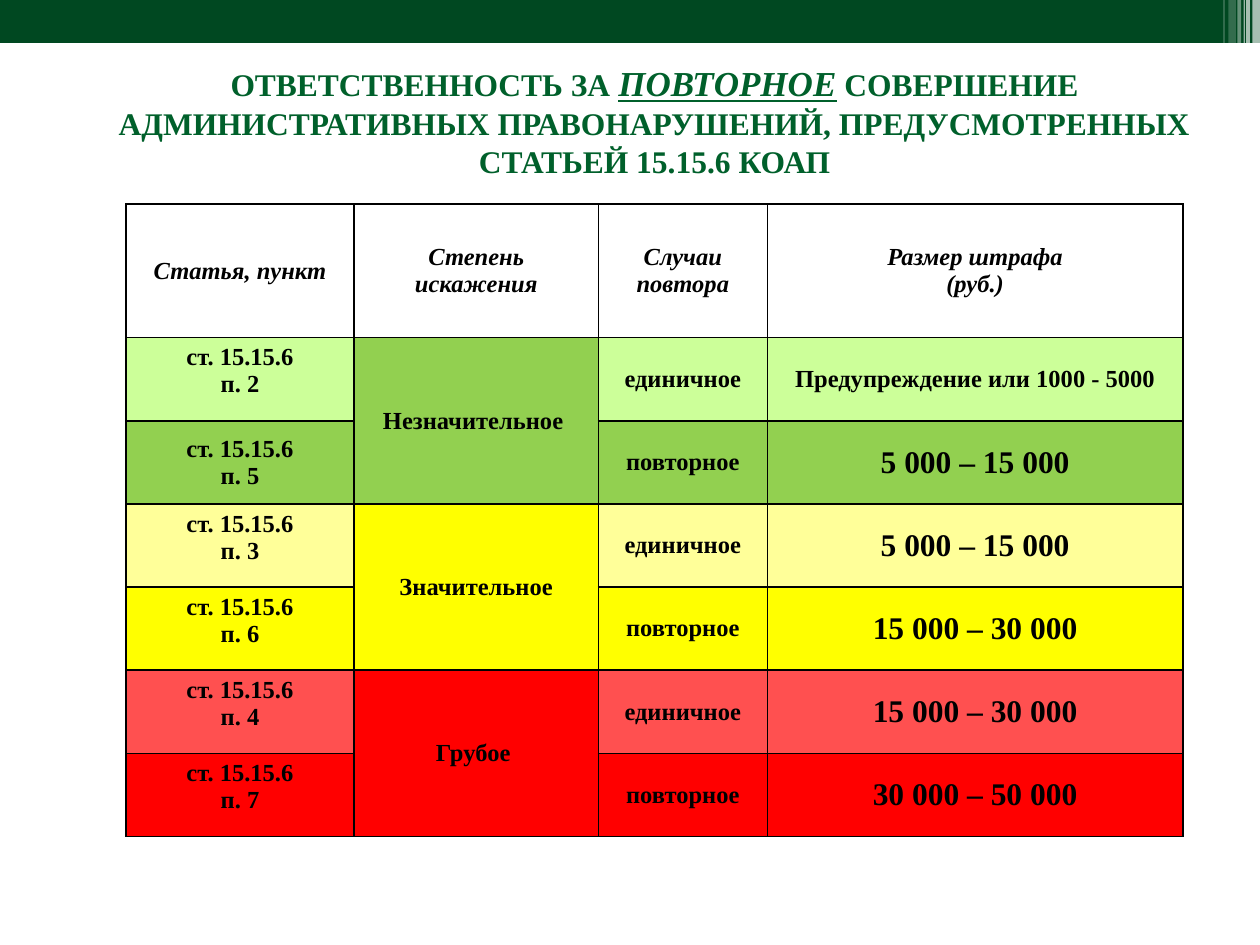
"""Build a slide on fines for repeated offences under article 15.15.6."""
import pptx
import pptx.util
import pptx.dml.color
import pptx.enum.shapes
import pptx.enum.text
import pptx.oxml
import pptx.oxml.ns
from lxml import etree

Inches = pptx.util.Inches
Pt = pptx.util.Pt
RGBColor = pptx.dml.color.RGBColor
Anchor = pptx.enum.text.MSO_ANCHOR
qn = pptx.oxml.ns.qn

FONT = "Times New Roman"
BLACK = RGBColor(0, 0, 0)
WHITE = RGBColor(255, 255, 255)
DARK = RGBColor(0x00, 0x48, 0x21)
GREEN = RGBColor(0x00, 0x60, 0x2B)
LIME = RGBColor(0xCC, 0xFF, 0x99)
GRASS = RGBColor(0x92, 0xD0, 0x50)
CREAM = RGBColor(0xFF, 0xFF, 0x99)
YELLOW = RGBColor(0xFF, 0xFF, 0x00)
CORAL = RGBColor(0xFF, 0x50, 0x50)
RED = RGBColor(0xFF, 0x00, 0x00)

STRIPES = [
    (9.94, 0.06, 0.34, 65), (9.89, 0.03, 0.34, 65), (9.87, 0.01, 0.34, 60),
    (9.82, 0.03, 0.34, 40), (9.75, 0.06, 0.36, 20), (9.71, 0.01, 0.36, 30),
]
COLS = [1.81, 1.94, 1.34, 3.3]
ROWS = [1.06] + [0.66] * 6
HEADS = ["Статья, пункт", "Степень искажения", "Случаи повтора",
         "Размер штрафа\n(руб.)"]
GRADES = [
    ("Незначительное ", (LIME, GRASS), (2, 5),
     ("Предупреждение или 1000 - 5000", "5 000 – 15 000")),
    ("Значительное", (CREAM, YELLOW), (3, 6),
     ("5 000 – 15 000", "15 000 – 30 000")),
    ("Грубое ", (CORAL, RED), (4, 7),
     ("15 000 – 30 000", "30 000 – 50 000")),
]
CASES = ["единичное", "повторное"]


def write(para, text, size=14, color=BLACK, italic=False, under=False):
    run = para.add_run()
    run.text = text
    font = run.font
    font.name, font.size, font.bold = FONT, Pt(size), True
    font.italic, font.underline = italic, under
    font.color.rgb = color
    para.alignment = pptx.enum.text.PP_ALIGN.CENTER


def bar(slide, left, width, height, color, alpha=100):
    shape = slide.shapes.add_shape(
        pptx.enum.shapes.MSO_SHAPE.RECTANGLE,
        Inches(left), 0, Inches(width), Inches(height))
    shape.shadow.inherit = False
    shape.line.fill.background()
    shape.fill.solid()
    shape.fill.fore_color.rgb = color
    if alpha < 100:
        tone = shape.fill._xPr.find(qn("a:solidFill"))[0]
        etree.SubElement(tone, qn("a:alpha")).set("val", str(alpha * 1000))


def border(cell):
    props = cell._tc.get_or_add_tcPr()
    for side in ("lnL", "lnR", "lnT", "lnB"):
        line = etree.SubElement(props, qn("a:" + side), w=str(Pt(1)))
        fill = etree.SubElement(line, qn("a:solidFill"))
        etree.SubElement(fill, qn("a:srgbClr"), val=str(BLACK))


def put(cell, text, color, anchor=Anchor.MIDDLE, **style):
    cell.vertical_anchor = anchor
    cell.fill.solid()
    cell.fill.fore_color.rgb = color
    frame = cell.text_frame
    for i, part in enumerate(text.split("\n")):
        para = frame.add_paragraph() if i else frame.paragraphs[0]
        write(para, part, **style)


def title(slide):
    shape = slide.shapes.title
    shape.left, shape.top = Inches(0.51), Inches(0.44)
    shape.width, shape.height = Inches(9.37), Inches(1.04)
    frame = shape.text_frame
    frame.word_wrap = True
    frame.auto_size = pptx.enum.text.MSO_AUTO_SIZE.NONE
    frame.vertical_anchor = Anchor.TOP
    para = frame.paragraphs[0]
    write(para, "ОТВЕТСТВЕННОСТЬ ЗА ", size=18, color=GREEN)
    write(para, "ПОВТОРНОЕ", size=20, color=GREEN, italic=True, under=True)
    write(para, " СОВЕРШЕНИЕ АДМИНИСТРАТИВНЫХ ПРАВОНАРУШЕНИЙ, "
          "ПРЕДУСМОТРЕННЫХ СТАТЬЕЙ 15.15.6 КОАП", size=18, color=GREEN)


def fines(slide):
    table = slide.shapes.add_table(
        len(ROWS), len(COLS), Inches(1), Inches(1.62),
        Inches(sum(COLS)), Inches(sum(ROWS))).table
    table.first_row = table.horz_banding = False
    for col, width in zip(table.columns, COLS):
        col.width = Inches(width)
    for row, height in zip(table.rows, ROWS):
        row.height = Inches(height)
    for cell in table.iter_cells():
        border(cell)
    for c, head in enumerate(HEADS):
        put(table.cell(0, c), head, WHITE, italic=True)
    for g, (grade, tones, points, sums) in enumerate(GRADES):
        top = 1 + 2 * g
        table.cell(top, 1).merge(table.cell(top + 1, 1))
        put(table.cell(top, 1), grade, tones[1])
        for i, (tone, point, fine) in enumerate(zip(tones, points, sums)):
            row = top + i
            anchor = Anchor.MIDDLE if point == 5 else Anchor.TOP
            put(table.cell(row, 0), f"ст. 15.15.6\nп. {point}", tone, anchor)
            put(table.cell(row, 2), CASES[i], tone)
            put(table.cell(row, 3), fine, tone, size=14 if row == 1 else 18)


def main():
    deck = pptx.Presentation()
    deck.slide_width, deck.slide_height = Inches(10), Inches(7.5)
    slide = deck.slides.add_slide(deck.slide_layouts[5])
    bar(slide, 0, 10, 0.34, DARK)
    for left, width, height, alpha in STRIPES:
        bar(slide, left, width, height, WHITE, alpha)
    title(slide)
    fines(slide)
    deck.save("out.pptx")


if __name__ == "__main__":
    main()
